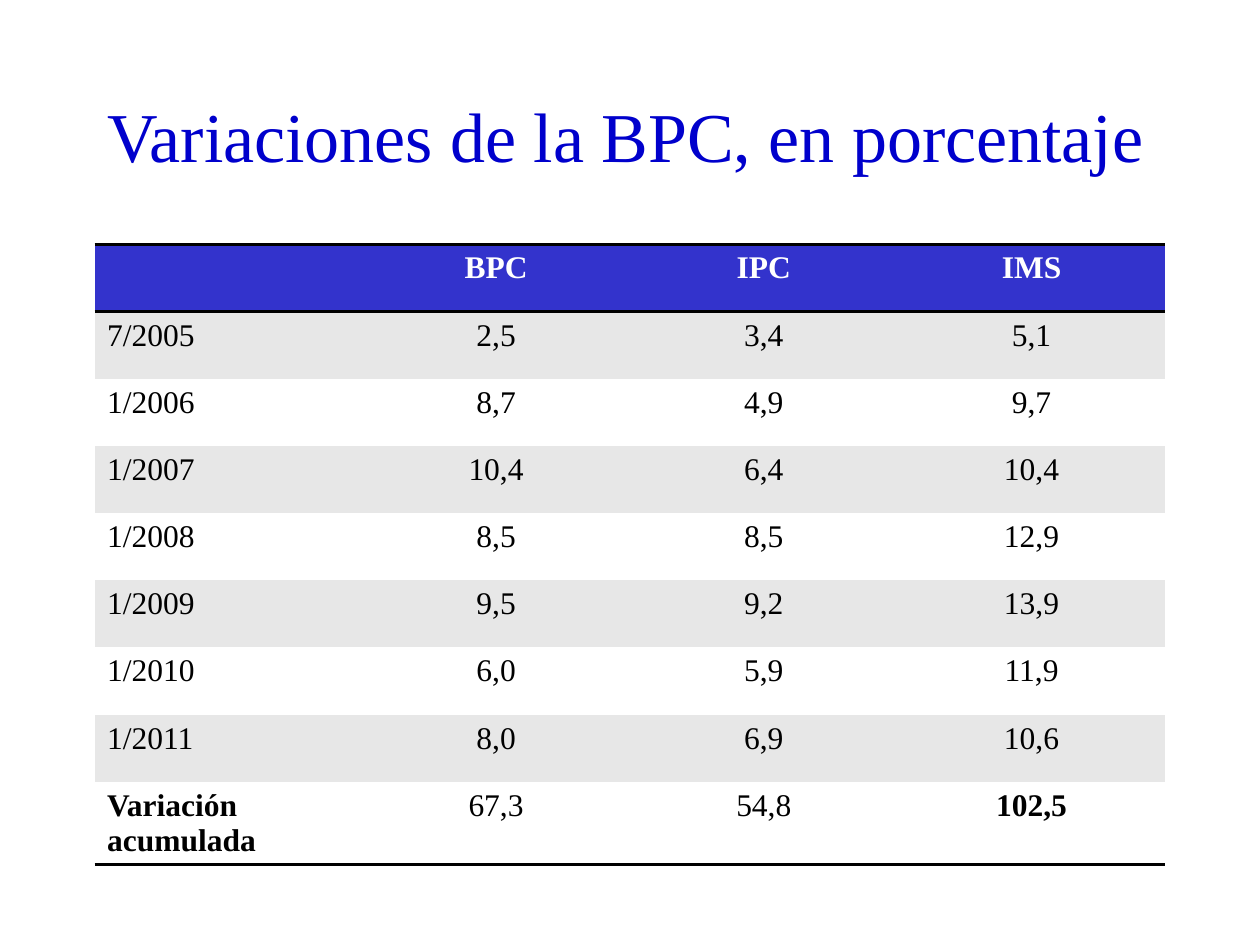
from lxml.etree import SubElement as Sub
from pptx import Presentation
from pptx.dml.color import RGBColor
from pptx.enum.text import MSO_ANCHOR as Anchor, PP_ALIGN as Align
from pptx.oxml.ns import qn
from pptx.util import Inches, Pt


def style(par, tint, **form):
    for run in par.runs:
        run.font.color.rgb = RGBColor.from_string(tint)
        for key, val in form.items():
            setattr(run.font, key, val)


def rule(cell, side):
    line = Sub(cell._tc.get_or_add_tcPr(), qn("a:" + side), w=str(Pt(2)))
    Sub(Sub(line, qn("a:solidFill")), qn("a:srgbClr"), val="000000")


FACE = "Times New Roman"
ROWS = [
    ["", "BPC", "IPC", "IMS"],
    ["7/2005", "2,5", "3,4", "5,1"],
    ["1/2006", "8,7", "4,9", "9,7"],
    ["1/2007", "10,4", "6,4", "10,4"],
    ["1/2008", "8,5", "8,5", "12,9"],
    ["1/2009", "9,5", "9,2", "13,9"],
    ["1/2010", "6,0", "5,9", "11,9"],
    ["1/2011", "8,0", "6,9", "10,6"],
    ["Variación acumulada", "67,3", "54,8", "102,5"],
]
LAST = len(ROWS) - 1

deck = Presentation()
deck.slide_width, deck.slide_height = Inches(10), Inches(7.5)
slide = deck.slides.add_slide(deck.slide_layouts[5])

title = slide.shapes.title
place = {"left": 0.75, "top": 0.44, "width": 8.74, "height": 1.25}
for key, val in place.items():
    setattr(title, key, Inches(val))
title.text_frame.text = "Variaciones de la BPC, en porcentaje"
title.text_frame.vertical_anchor = Anchor.MIDDLE
head = title.text_frame.paragraphs[0]
head.alignment = Align.LEFT
style(head, "0000CC", name=FACE, size=Pt(40))

frame = slide.shapes.add_table(
    len(ROWS), 4, Inches(0.75), Inches(1.94), Inches(8.5), Inches(4.8))
table = frame.table
table._tbl.tblPr.find(qn("a:tableStyleId")).text = "{2D5ABB26-0587-4C30-8999-92F81FD0307C}"
for row in table.rows:
    row.height = Inches(4.8 / len(ROWS))

for r, row in enumerate(ROWS):
    back = "3333CC" if r == 0 else "E7E7E7" if r % 2 else "FFFFFF"
    for c, text in enumerate(row):
        cell = table.cell(r, c)
        if r == 0:
            rule(cell, "lnT")
        if r in (0, LAST):
            rule(cell, "lnB")
        cell.fill.solid()
        cell.fill.fore_color.rgb = RGBColor.from_string(back)
        cell.text = text
        par = cell.text_frame.paragraphs[0]
        par.alignment = Align.CENTER if c else Align.LEFT
        bold = r == 0 or (r == LAST and c in (0, 3))
        style(par, "000000" if r else "FFFFFF", name=FACE, size=Pt(18), bold=bold)

deck.save("out.pptx")
